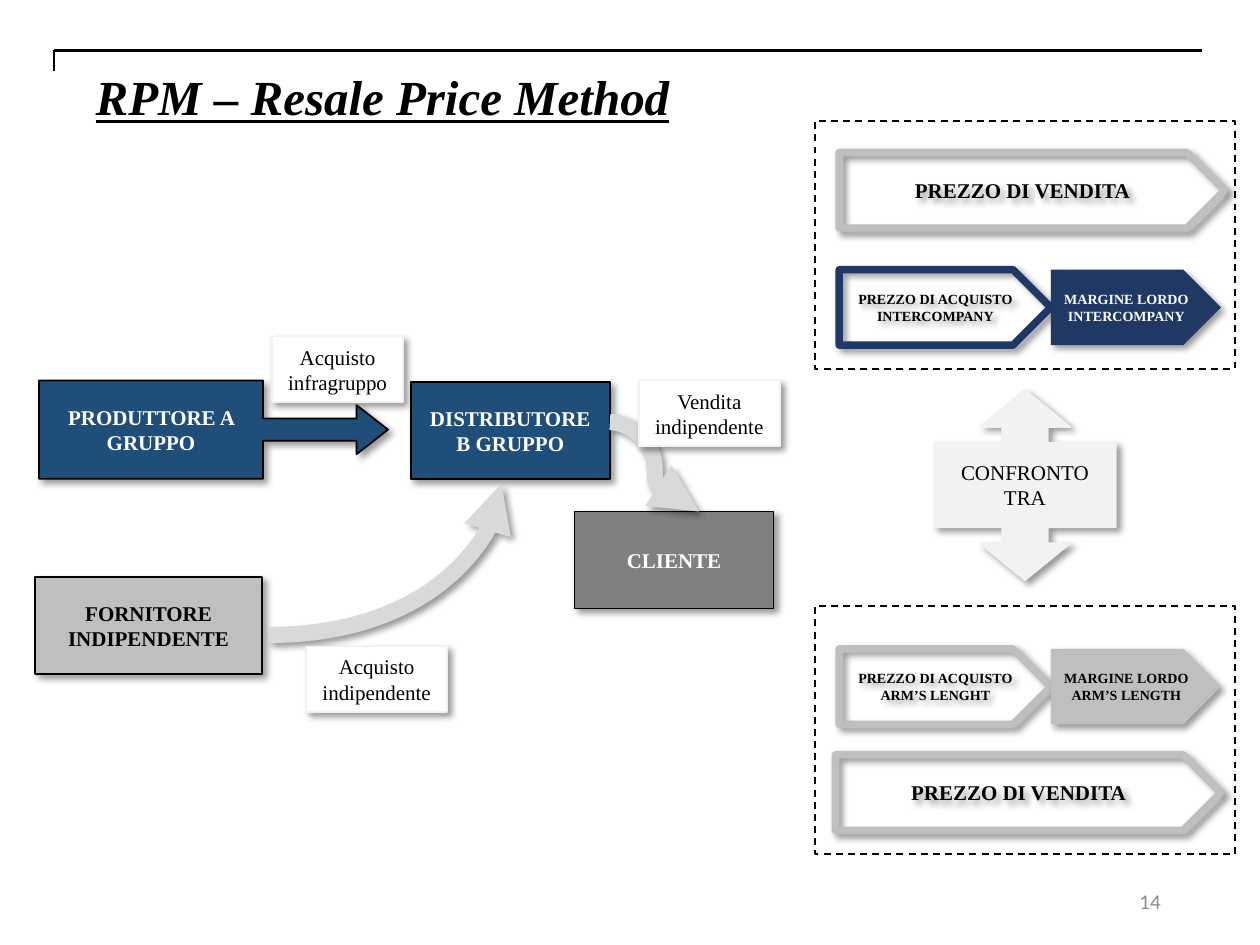
from lxml import etree
from pptx import Presentation
from pptx.dml.color import RGBColor
from pptx.enum.dml import MSO_LINE
from pptx.enum.shapes import MSO_CONNECTOR, MSO_SHAPE
from pptx.enum.text import MSO_ANCHOR, PP_ALIGN
from pptx.oxml.ns import qn
from pptx.util import Inches, Pt

RECT, PLATE = MSO_SHAPE.RECTANGLE, MSO_SHAPE.PENTAGON
CALLOUT = MSO_SHAPE.RIGHT_ARROW_CALLOUT
DOUBLE_CALLOUT = MSO_SHAPE.LEFT_RIGHT_ARROW_CALLOUT
STRAIGHT, CURVE = MSO_CONNECTOR.STRAIGHT, MSO_CONNECTOR.CURVE
LEFT, CENTER, RIGHT = PP_ALIGN.LEFT, PP_ALIGN.CENTER, PP_ALIGN.RIGHT
TOP, MIDDLE = MSO_ANCHOR.TOP, MSO_ANCHOR.MIDDLE
SERIF = "Times New Roman"
COLORS = {"black": "000000", "white": "FFFFFF", "blue": "1F4E79", "navy": "203864",
          "silver": "BFBFBF", "gray": "808080", "pale": "F2F2F2", "curve": "D9D9D9",
          "number": "8C8C8C"}
PANEL_W, PANEL_H, PLATE_H = 3.33, 1.97, 0.6


def rgb(name):
    return RGBColor.from_string(COLORS[name])


def inches(values):
    return [Inches(value) for value in values]


def write(shape, text, size=12, color="black", bold=False, align=CENTER,
          anchor=MIDDLE, font=SERIF):
    """Write one paragraph per line of text and return the last run."""
    frame = shape.text_frame
    frame.word_wrap = True
    frame.vertical_anchor = anchor
    for index, line in enumerate(text.split("\n")):
        para = frame.add_paragraph() if index else frame.paragraphs[0]
        para.alignment = align
        span = para.add_run()
        span.text = line
        span.font.name, span.font.size, span.font.bold = font, Pt(size), bold
        span.font.color.rgb = rgb(color)
    return span


def add_shadow(effects):
    outer = etree.SubElement(effects, qn("a:outerShdw"), blurRad="50800", dist="38100",
                             dir="2700000", algn="tl", rotWithShape="0")
    tint = etree.SubElement(outer, qn("a:srgbClr"), val=COLORS["black"])
    etree.SubElement(tint, qn("a:alpha"), val="40000")


def add_box(page, kind, box, fill=None, line=None, width=1, shadow=True, adjust=()):
    shape = page.shapes.add_shape(kind, *inches(box))
    for index, value in enumerate(adjust):
        shape.adjustments[index] = value
    if fill:
        shape.fill.solid()
        shape.fill.fore_color.rgb = rgb(fill)
    else:
        shape.fill.background()
    if line:
        shape.line.color.rgb = rgb(line)
        shape.line.width = Pt(width)
    else:
        shape.line.fill.background()
    shape.shadow.inherit = False
    if shadow:
        add_shadow(shape._element.spPr.find(qn("a:effectLst")))
    return shape


def add_line(page, start, end, color, width, kind=STRAIGHT):
    line = page.shapes.add_connector(kind, *inches(start + end))
    line.line.color.rgb = rgb(color)
    line.line.width = Pt(width)
    return line, etree.SubElement(line._element.spPr, qn("a:effectLst"))


def add_curve(page, start, end, preset):
    curve, effects = add_line(page, start, end, "curve", 9.25, CURVE)
    curve._element.spPr.find(qn("a:prstGeom")).set("prst", preset)
    etree.SubElement(curve.line._get_or_add_ln(), qn("a:tailEnd"), type="triangle")
    add_shadow(effects)


def heading(page, box):
    left, top, width, height = box
    add_line(page, (left, top), (left + width, top), "black", 1.5)
    add_line(page, (left, top), (left, top + 0.16), "black", 1.5)
    title = page.shapes.title
    title.left, title.top, title.width, title.height = inches(
        (left + 0.23, top + 0.08, 6.15, height))
    span = write(title, "RPM – Resale Price Method", 28, bold=True, align=LEFT, anchor=TOP)
    span.font.italic = span.font.underline = True


def wide_plate(page, left, top):
    plate = add_box(page, PLATE, (left, top, 3.06, PLATE_H), line="silver", width=4.25)
    write(plate, "PREZZO DI VENDITA", bold=True)


def plate_pair(page, left, top, kind, color, margin_color):
    """Purchase price outlined, followed by the gross margin filled."""
    price_w, margin_w = 1.68, 1.35
    price = add_box(page, PLATE, (left, top, price_w, PLATE_H), line=color, width=4.25)
    write(price, f"PREZZO DI ACQUISTO {kind[0]}", 8, bold=True)
    margin = add_box(page, PLATE, (left + price_w, top, margin_w, PLATE_H), color)
    write(margin, f"MARGINE LORDO {kind[1]}", 8, margin_color, True)


def price_panel(page, left, top, pair_first):
    add_box(page, RECT, (left, top, PANEL_W, PANEL_H), "white", "black",
            shadow=False).line.dash_style = MSO_LINE.DASH
    if pair_first:
        plate_pair(page, left + 0.19, top + 0.34, ("ARM’S LENGHT", "ARM’S LENGTH"),
                   "silver", "black")
        wide_plate(page, left + 0.16, top + 1.18)
    else:
        wide_plate(page, left + 0.19, top + 0.25)
        plate_pair(page, left + 0.19, top + 1.18, ("INTERCOMPANY", "INTERCOMPANY"),
                   "navy", "white")


def comparison(page, center_x, center_y):
    width, height = 1.51, 1.44
    arrow = add_box(page, DOUBLE_CALLOUT,
                    (center_x - width / 2, center_y - height / 2, width, height),
                    "pale", "pale", adjust=(0.25, 0.25, 0.204, 0.445))
    arrow.rotation = 90
    label = page.shapes.add_textbox(*inches((center_x - 0.72, center_y - 0.25, 1.44, 0.5)))
    write(label, "CONFRONTO TRA", anchor=TOP)


def supply_chain(page, left, top):
    """Parties, flows and flow labels, placed from the top left corner."""
    def place(x, y, width, height):
        return left + x, top + y, width, height

    def point(x, y):
        return left + x, top + y

    producer = add_box(page, CALLOUT, place(0.03, 0.35, 2.77, 0.78), "blue", "black",
                       adjust=(0.227, 0.25, 0.32, 0.642))
    write(producer, "PRODUTTORE A GRUPPO", color="white", bold=True)
    parties = [
        ("DISTRIBUTORE B GRUPPO", 2.98, 0.36, 1.58, "blue", "white"),
        ("FORNITORE\nINDIPENDENTE", 0, 1.91, 1.8, "silver", "black"),
        ("CLIENTE", 4.28, 1.39, 1.58, "gray", "white"),
    ]
    for text, x, y, width, fill, color in parties:
        party = add_box(page, RECT, place(x, y, width, 0.77), fill, "black")
        write(party, text, color=color, bold=True)
    add_curve(page, point(1.85, 2.37), point(3.7, 1.17), "curvedConnector2")
    add_curve(page, point(4.56, 0.68), point(5.27, 1.39), "curvedConnector3")
    labels = [
        ("Acquisto\ninfragruppo", 1.88, 0, 1.04),
        ("Acquisto\nindipendente", 2.15, 2.46, 1.12),
        ("Vendita\nindipendente", 4.79, 0.35, 1.12),
    ]
    for text, x, y, width in labels:
        write(add_box(page, RECT, place(x, y, width, 0.52), "white", "pale"), text)


def page_number(page, box):
    write(page.shapes.add_textbox(*inches(box)), "14", color="number", align=RIGHT,
          font="Calibri")


def main():
    deck = Presentation()
    deck.slide_width, deck.slide_height = inches((10, 7.5))
    page = deck.slides.add_slide(deck.slide_layouts[5])
    heading(page, (0.43, 0.4, 9.11, 0.57))
    supply_chain(page, 0.28, 2.67)
    panel_left = 6.47
    price_panel(page, panel_left, 0.96, pair_first=False)
    comparison(page, panel_left + PANEL_W / 2, 3.85)
    price_panel(page, panel_left, 4.81, pair_first=True)
    page_number(page, (7.06, 6.95, 2.25, 0.4))
    deck.save("out.pptx")


if __name__ == "__main__":
    main()
